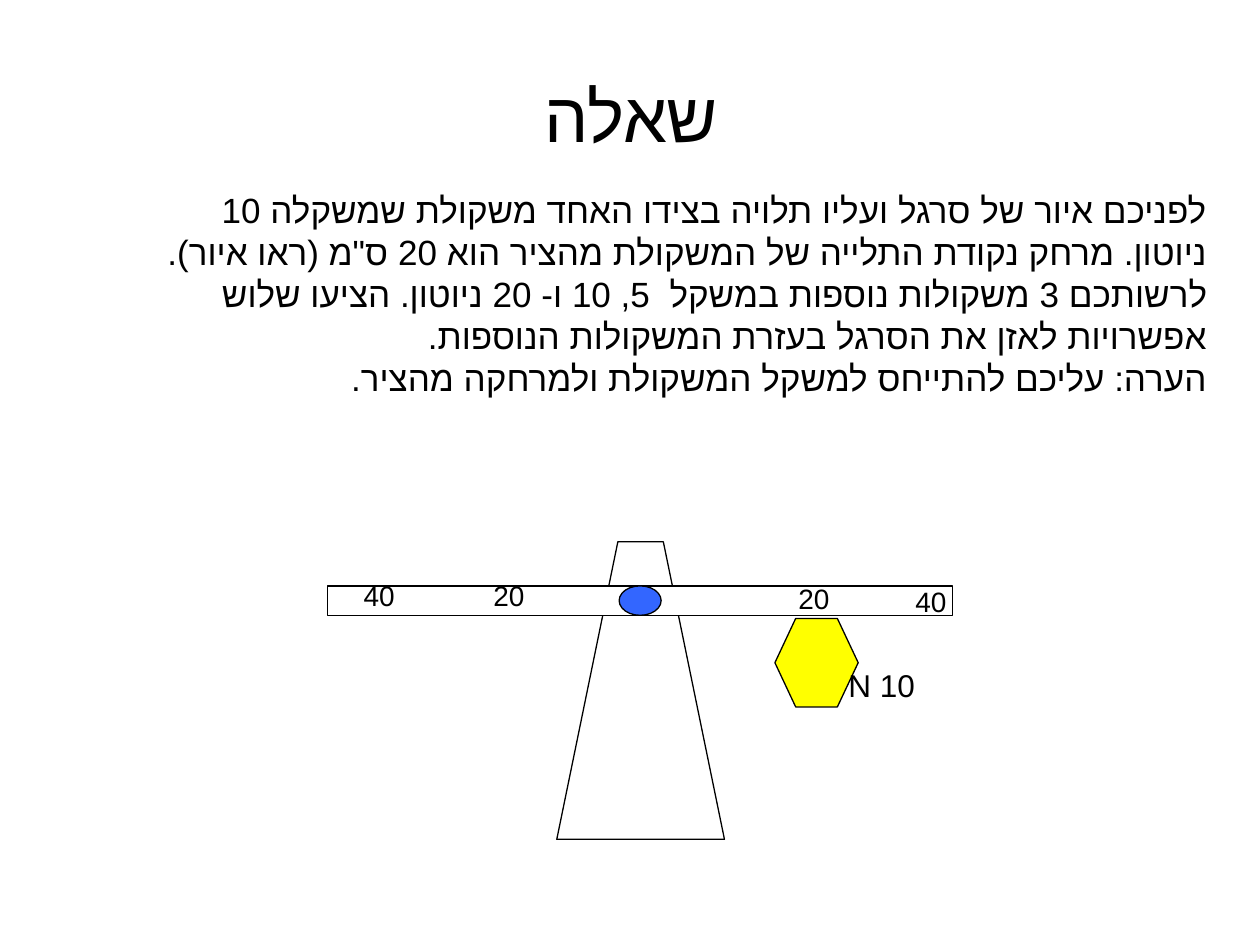
from lxml import etree
from pptx import Presentation
from pptx.dml.color import RGBColor
from pptx.enum.shapes import MSO_SHAPE
from pptx.enum.text import MSO_ANCHOR, PP_ALIGN
from pptx.oxml.ns import qn
from pptx.util import Pt

RECTANGLE, OVAL, HEXAGON = MSO_SHAPE.RECTANGLE, MSO_SHAPE.OVAL, MSO_SHAPE.HEXAGON
TOP, MIDDLE = MSO_ANCHOR.TOP, MSO_ANCHOR.MIDDLE
RIGHT, CENTER = PP_ALIGN.RIGHT, PP_ALIGN.CENTER

FONT = "Arial"
COLORS = {"ink": "000000", "paper": "FFFFFF", "pivot": "3366FF", "weight": "FFFF00"}
QUESTION = (
    "לפניכם איור של סרגל ועליו תלויה בצידו האחד משקולת שמשקלה 10 ניוטון. "
    "מרחק נקודת התלייה של המשקולת מהציר הוא 20 ס\"מ (ראו איור). "
    "לרשותכם 3 משקולות נוספות במשקל  5, 10 ו- 20 ניוטון. "
    "הציעו שלוש אפשרויות לאזן את הסרגל בעזרת המשקולות הנוספות.\n"
    "הערה: עליכם להתייחס למשקל המשקולת ולמרחקה מהציר."
)


def color(key):
    return RGBColor.from_string(COLORS[key])


def add_hebrew_text(slide, box, text, size, align=RIGHT, anchor=TOP):
    frame = slide.shapes.add_textbox(*map(Pt, box)).text_frame
    frame.word_wrap = True
    frame.vertical_anchor = anchor
    frame.text = text
    for paragraph in frame.paragraphs:
        paragraph.alignment = align
        paragraph._p.get_or_add_pPr().set("rtl", "1")
        for run in paragraph.runs:
            run.font.name = FONT
            run.font.size = Pt(size)
            run.font.color.rgb = color("ink")
            etree.SubElement(run._r.get_or_add_rPr(), qn("a:cs"), typeface=FONT)


def paint(shape, fill):
    shape.shadow.inherit = False
    shape.fill.solid()
    shape.fill.fore_color.rgb = color(fill)
    shape.line.color.rgb = color("ink")
    shape.line.width = Pt(0.75)


def add_stand(slide, box, top_width):
    left, top, width, height = box
    inset = (width - top_width) / 2
    right, bottom = left + width, top + height
    outline = slide.shapes.build_freeform(Pt(left), Pt(bottom))
    corners = [(left + inset, top), (right - inset, top), (right, bottom)]
    outline.add_line_segments([(Pt(x), Pt(y)) for x, y in corners], close=True)
    paint(outline.convert_to_shape(), "paper")


def add_ruler(slide, box, pivot_width):
    left, top, width, height = box
    ruler = slide.shapes.add_group_shape()
    paint(ruler.shapes.add_shape(RECTANGLE, *map(Pt, box)), "paper")
    pivot_box = (left + (width - pivot_width) / 2, top, pivot_width, height)
    paint(ruler.shapes.add_shape(OVAL, *map(Pt, pivot_box)), "pivot")


def add_weight(slide, box):
    weight = slide.shapes.add_shape(HEXAGON, *map(Pt, box))
    weight.adjustments[0] = 0.25
    paint(weight, "weight")


def add_balance(slide, box):
    left, top, width, height = box
    add_stand(slide, (left + 131, top, 95.8, height), 26)
    add_ruler(slide, (left, top + 25.2, width, 16.8), 24)
    add_weight(slide, (left + 255.6, top + 43.8, 47.6, 50.6))
    marks = [("20", 222.5, 19.4), ("40", 289.4, 20.9), ("20", 48.2, 17.3), ("40", -25.9, 17.3)]
    for distance, x, y in marks:
        add_hebrew_text(slide, (left + x, top + y, 71.3, 33.8), distance, 16)
    add_hebrew_text(slide, (left + 223.9, top + 67.7, 118.8, 33.8), "N 10", 18)


def main():
    presentation = Presentation()
    presentation.slide_width, presentation.slide_height = Pt(720), Pt(540)
    slide = presentation.slides.add_slide(presentation.slide_layouts[6])
    add_hebrew_text(slide, (36.7, 20.2, 648, 90), "שאלה", 40, CENTER, MIDDLE)
    add_hebrew_text(slide, (87.8, 104.4, 609.1, 151.2), QUESTION, 20)
    add_balance(slide, (187.2, 309.6, 357.2, 170))
    presentation.save("out.pptx")


if __name__ == "__main__":
    main()
